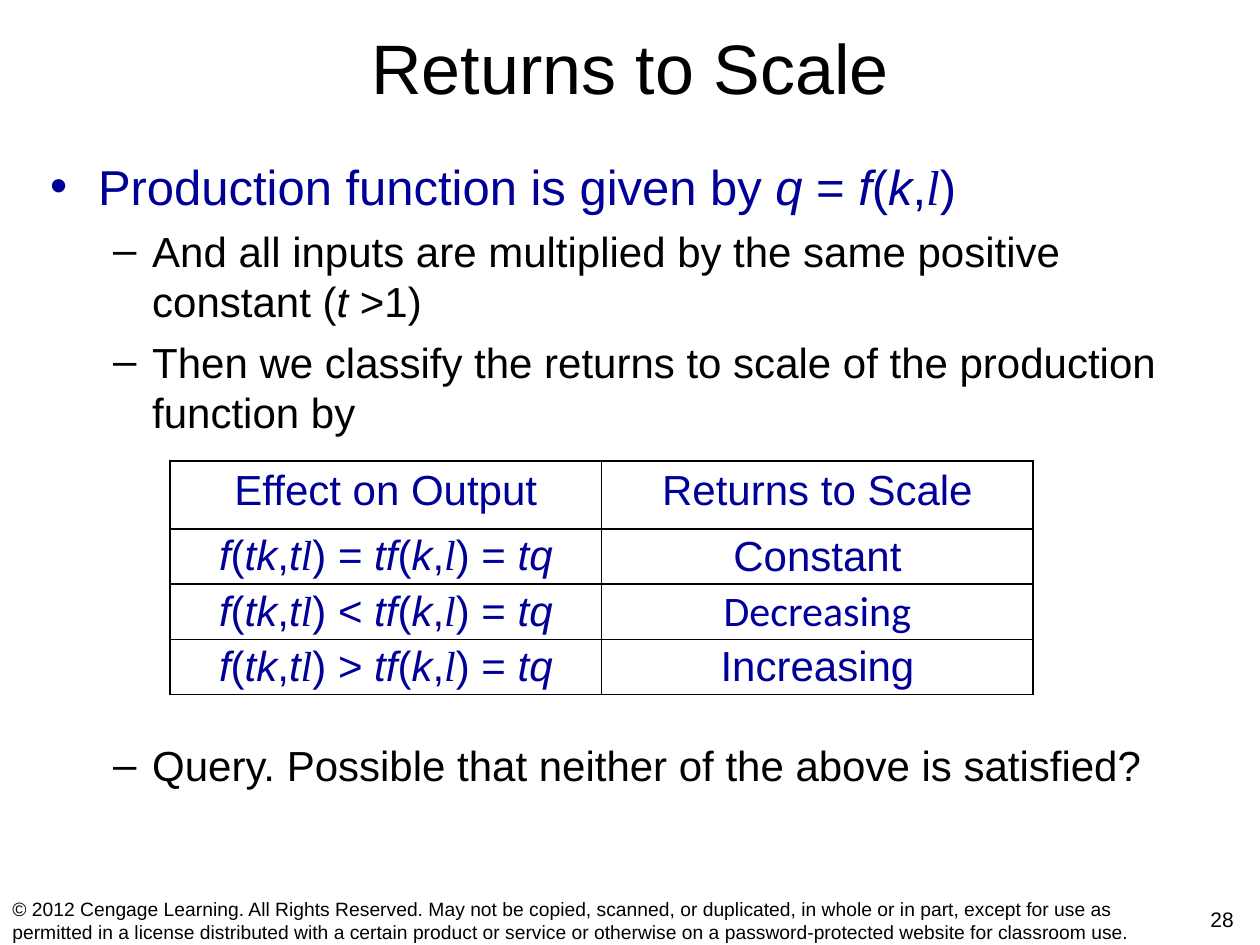
from dataclasses import dataclass
from typing import Optional

from lxml.etree import SubElement
from pptx import Presentation
from pptx.dml.color import RGBColor
from pptx.enum.text import MSO_ANCHOR, PP_ALIGN
from pptx.oxml.ns import qn
from pptx.util import Inches, Pt

WIDTH, HEIGHT = Inches(10), Inches(7.5)


@dataclass(frozen=True)
class Theme:
    font: str = "Arial"
    math_font: str = "Times New Roman"
    alt_font: str = "Calibri"
    ink: str = "000000"
    accent: str = "000099"
    title: float = 40
    lead: float = 28
    body: float = 24
    number: float = 12
    footer: float = 11
    border: float = 1


@dataclass(frozen=True)
class Box:
    left: float
    top: float
    width: float
    height: float

    def emu(self) -> tuple[int, int, int, int]:
        return (int(self.left * WIDTH), int(self.top * HEIGHT),
                int(self.width * WIDTH), int(self.height * HEIGHT))


@dataclass(frozen=True)
class Bullet:
    char: str
    margin: float
    hang: float


@dataclass(frozen=True)
class Point:
    text: str
    bullet: Bullet
    size: float
    color: str
    before: float = 0


@dataclass(frozen=True)
class Row:
    effect: str
    returns: str
    share: float
    font: str


THEME = Theme()
DOT = Bullet("•", 0.38, 0.38)
DASH = Bullet("–", 0.81, 0.31)
GAP = 5.8
TABLE_GAP = 173

POINTS = [
    Point("Production function is given by |q| = |f|(|k|,|l|)", DOT, THEME.lead, THEME.accent),
    Point("And all inputs are multiplied by the same positive constant (|t| >1)",
          DASH, THEME.body, THEME.ink, GAP),
    Point("Then we classify the returns to scale of the production function by",
          DASH, THEME.body, THEME.ink, GAP),
    Point("Query. Possible that neither of the above is satisfied?",
          DASH, THEME.body, THEME.ink, TABLE_GAP),
]


def effect(sign: str) -> str:
    return f"|f|(|tk|,|t||l|) {sign} |tf|(|k|,|l|) = |tq|"


ROWS = [
    Row("Effect on Output", "Returns to Scale", 0.29, THEME.font),
    Row(effect("="), "Constant", 0.237, THEME.font),
    Row(effect("<"), "Decreasing", 0.237, THEME.alt_font),
    Row(effect(">"), "Increasing", 0.237, THEME.font),
]

COPYRIGHT = (
    "© 2012 Cengage Learning. All Rights Reserved. May not be copied, scanned, or duplicated, "
    "in whole or in part, except for use as permitted in a license distributed with a certain "
    "product or service or otherwise on a password-protected website for classroom use."
)


def write(p, text: str, *, size: float, color: str = THEME.ink, font: str = THEME.font,
          align: PP_ALIGN = PP_ALIGN.LEFT, before: float = 0,
          bullet: Optional[Bullet] = None) -> None:
    """Write text into a paragraph; |bars| enclose italics, and |l| takes the math font."""
    if bullet:
        pPr = p._p.get_or_add_pPr()
        pPr.set("marL", str(Inches(bullet.margin)))
        pPr.set("indent", str(-Inches(bullet.hang)))
        SubElement(pPr, qn("a:buFont")).set("typeface", THEME.font)
        SubElement(pPr, qn("a:buChar")).set("char", bullet.char)
    p.alignment = align
    p.space_before = Pt(before)
    for i, part in enumerate(text.split("|")):
        if not part:
            continue
        italic = i % 2 == 1
        r = p.add_run()
        r.text = part
        r.font.name = THEME.math_font if italic and part == "l" else font
        r.font.size = Pt(size)
        r.font.italic = italic
        r.font.color.rgb = RGBColor.from_string(color)


def add_frame(s, box: Box, anchor: MSO_ANCHOR = MSO_ANCHOR.MIDDLE):
    tf = s.shapes.add_textbox(*box.emu()).text_frame
    tf.word_wrap = True
    tf.vertical_anchor = anchor
    return tf


def add_points(s, box: Box, points: list[Point]) -> None:
    tf = add_frame(s, box, MSO_ANCHOR.TOP)
    tf.margin_top = Inches(0.1)
    for i, point in enumerate(points):
        p = tf.add_paragraph() if i else tf.paragraphs[0]
        write(p, point.text, size=point.size, color=point.color,
              before=point.before, bullet=point.bullet)


def set_borders(cell) -> None:
    tcPr = cell._tc.get_or_add_tcPr()
    for i, side in enumerate(("lnL", "lnR", "lnT", "lnB")):
        ln = tcPr.makeelement(qn(f"a:{side}"), {"w": str(Pt(THEME.border))})
        fill = SubElement(ln, qn("a:solidFill"))
        SubElement(fill, qn("a:srgbClr")).set("val", THEME.ink)
        tcPr.insert(i, ln)


def add_returns_table(s, box: Box, rows: list[Row]) -> None:
    table = s.shapes.add_table(len(rows), 2, *box.emu()).table
    table.first_row = table.horz_banding = False
    for i, row in enumerate(rows):
        table.rows[i].height = int(row.share * box.height * HEIGHT)
        side, edge = (0.1, 0.05) if i == 0 else (0.07, 0)
        for j, (text, font) in enumerate(((row.effect, THEME.font), (row.returns, row.font))):
            cell = table.cell(i, j)
            cell.margin_left = cell.margin_right = Inches(side)
            cell.margin_top = cell.margin_bottom = Inches(edge)
            cell.vertical_anchor = MSO_ANCHOR.MIDDLE if i else MSO_ANCHOR.TOP
            cell.fill.background()
            set_borders(cell)
            write(cell.text_frame.paragraphs[0], text, size=THEME.body,
                  color=THEME.accent, font=font, align=PP_ALIGN.CENTER)


def main() -> None:
    prs = Presentation()
    prs.slide_width, prs.slide_height = WIDTH, HEIGHT
    s = prs.slides.add_slide(prs.slide_layouts[6])
    write(add_frame(s, Box(0.02, 0, 0.96, 0.14)).paragraphs[0], "Returns to Scale",
          size=THEME.title, align=PP_ALIGN.CENTER)
    add_points(s, Box(0.03, 0.152, 0.939, 0.788), POINTS)
    write(add_frame(s, Box(0.94, 0.945, 0.06, 0.055)).paragraphs[0], "28",
          size=THEME.number, align=PP_ALIGN.CENTER)
    write(add_frame(s, Box(0, 0.947, 0.933, 0.053)).paragraphs[0], COPYRIGHT,
          size=THEME.footer)
    add_returns_table(s, Box(0.135, 0.488, 0.685, 0.247), ROWS)
    prs.save("out.pptx")


if __name__ == "__main__":
    main()
